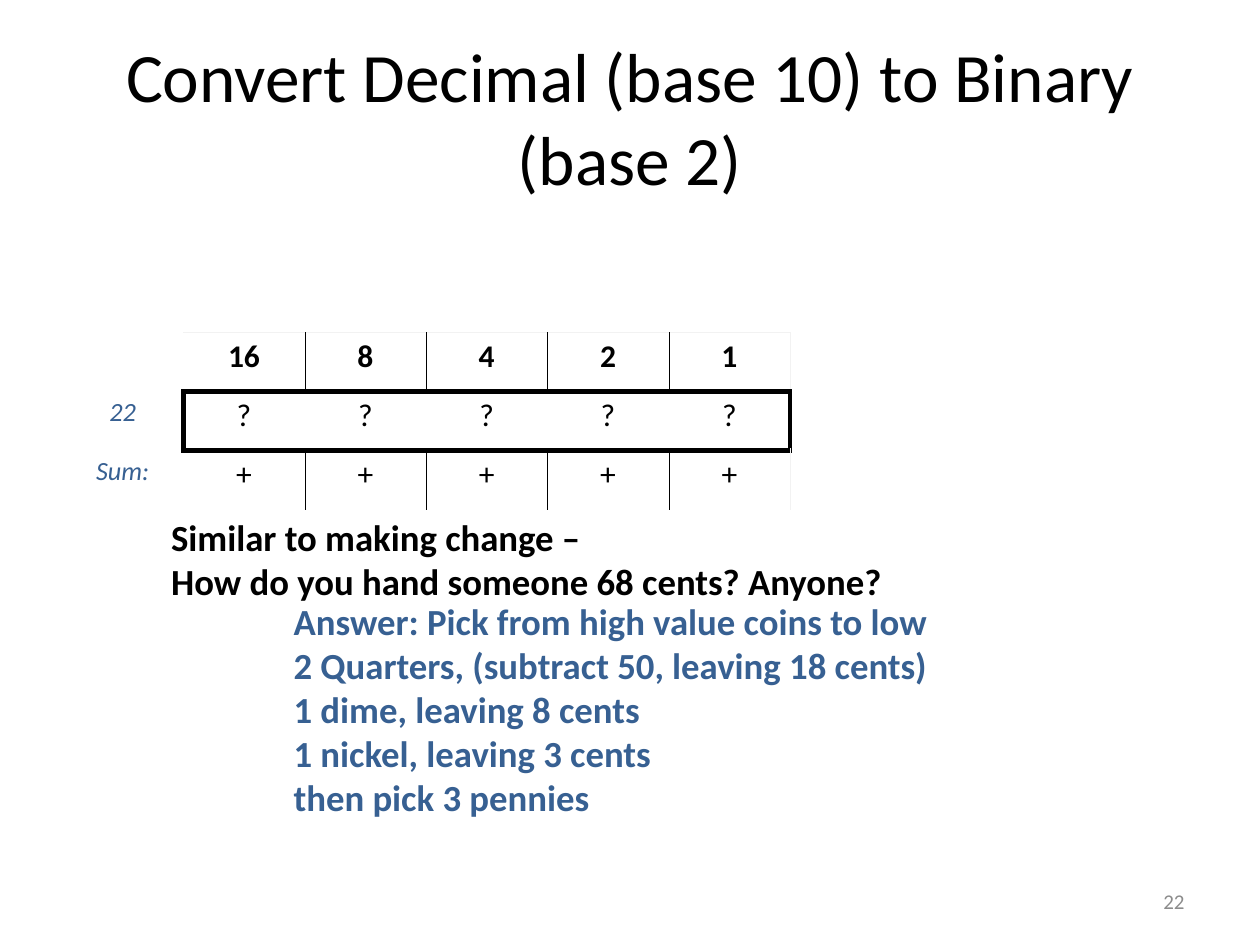
from dataclasses import dataclass

from lxml import etree
from pptx import Presentation
from pptx.dml.color import RGBColor
from pptx.enum import text
from pptx.oxml import ns
from pptx.util import Cm, Pt

FONT = "Calibri"
BLACK, BLUE, GRAY, PALE, WHITE = "000000", "376092", "8C8C8C", "F2F2F2", "FFFFFF"
THIN, THICK = 0.25, 3
LEFT, CENTER, RIGHT = text.PP_ALIGN.LEFT, text.PP_ALIGN.CENTER, text.PP_ALIGN.RIGHT
TOP, MIDDLE = text.MSO_ANCHOR.TOP, text.MSO_ANCHOR.MIDDLE


@dataclass(frozen=True)
class Box:
    left: float
    top: float
    width: float
    height: float

    def lengths(self):
        return Cm(self.left), Cm(self.top), Cm(self.width), Cm(self.height)


@dataclass(frozen=True)
class Edge:
    color: str
    points: float


def rgb(color: str) -> RGBColor:
    return RGBColor.from_string(color)


def write(frame, lines, *, size, color=BLACK, bold=False, italic=False,
          align=LEFT, anchor=None):
    frame.word_wrap = True
    if anchor is not None:
        frame.vertical_anchor = anchor
    for index, line in enumerate(lines):
        paragraph = frame.add_paragraph() if index else frame.paragraphs[0]
        paragraph.alignment = align
        run = paragraph.add_run()
        run.text = line
        run.font.name = FONT
        run.font.size = Pt(size)
        run.font.bold = bold
        run.font.italic = italic
        run.font.color.rgb = rgb(color)


def add_text(slide, box: Box, *lines: str, **style):
    write(slide.shapes.add_textbox(*box.lengths()).text_frame, lines, **style)


def set_borders(cell, edges: dict[str, Edge]):
    """Draw the given L, R, T, B edges and hide the others."""
    properties = cell._tc.get_or_add_tcPr()
    for side in "LRTB":
        line = etree.SubElement(properties, ns.qn(f"a:ln{side}"))
        edge = edges.get(side)
        if edge is None:
            line.set("w", "0")
            etree.SubElement(line, ns.qn("a:noFill"))
            continue
        line.set("w", str(Pt(edge.points)))
        fill = etree.SubElement(line, ns.qn("a:solidFill"))
        etree.SubElement(fill, ns.qn("a:srgbClr")).set("val", edge.color)


def cell_edges(row: int, column: int, last: int) -> dict[str, Edge]:
    """Box the digit row thickly and separate the columns around it thinly."""
    thin, thick, pale = Edge(BLACK, THIN), Edge(BLACK, THICK), Edge(PALE, THIN)
    if column == 0:
        return {"R": thick} if row == 1 else {}
    if row == 1:
        edges = {"T": thick, "B": thick}
        if column == 1:
            edges["L"] = thick
        if column == last:
            edges["R"] = thick
        return edges
    edges = {"R": pale if column == last else thin}
    if column > 1:
        edges["L"] = thin
    if row == 0:
        return edges | {"T": pale, "B": thick}
    return edges | {"T": thick, "B": Edge(WHITE, THIN)}


def add_place_values(slide, box: Box, rows: list[list[str]]):
    last = len(rows[0]) - 1
    table = slide.shapes.add_table(len(rows), last + 1, *box.lengths()).table
    table.first_row = table.horz_banding = False
    for column in table.columns:
        column.width = Cm(box.width / (last + 1))
    for row in table.rows:
        row.height = Cm(box.height / len(rows))
    for r, values in enumerate(rows):
        for c, value in enumerate(values):
            cell = table.cell(r, c)
            cell.margin_left = cell.margin_right = Cm(0.18)
            cell.margin_top = cell.margin_bottom = Cm(0.1)
            set_borders(cell, cell_edges(r, c, last))
            cell.fill.background()
            if not value:
                continue
            label = c == 0
            write(cell.text_frame, [value], size=15 if label else 18,
                  color=BLUE if label else BLACK, bold=r == 0,
                  italic=label, align=CENTER)


def main():
    deck = Presentation()
    deck.slide_width, deck.slide_height = Cm(25.4), Cm(19.05)
    slide = deck.slides.add_slide(deck.slide_layouts[6])

    add_text(slide, Box(1.27, 0.76, 22.86, 3.18),
             "Convert Decimal (base 10) to Binary (base 2)",
             size=39.6, align=CENTER, anchor=MIDDLE)

    powers = [str(2 ** n) for n in range(4, -1, -1)]
    add_place_values(slide, Box(1.25, 6.7, 14.68, 3.57), [
        ["", *powers],
        ["22", *"?" * len(powers)],
        ["Sum:", *"+" * len(powers)],
    ])

    add_text(slide, Box(3.2, 10.26, 16.03, 2.06),
             "Similar to making change –",
             "How do you hand someone 68 cents? Anyone?",
             size=21, bold=True, anchor=TOP)
    add_text(slide, Box(5.67, 11.94, 16.03, 4.75),
             "Answer: Pick from high value coins to low",
             "2 Quarters, (subtract 50, leaving 18 cents)",
             "1 dime, leaving 8 cents",
             "1 nickel, leaving 3 cents",
             "then pick 3 pennies",
             size=21, color=BLUE, bold=True, anchor=TOP)
    add_text(slide, Box(18.2, 17.65, 5.93, 1.02), "22",
             size=12, color=GRAY, align=RIGHT, anchor=MIDDLE)

    deck.save("out.pptx")


if __name__ == "__main__":
    main()
